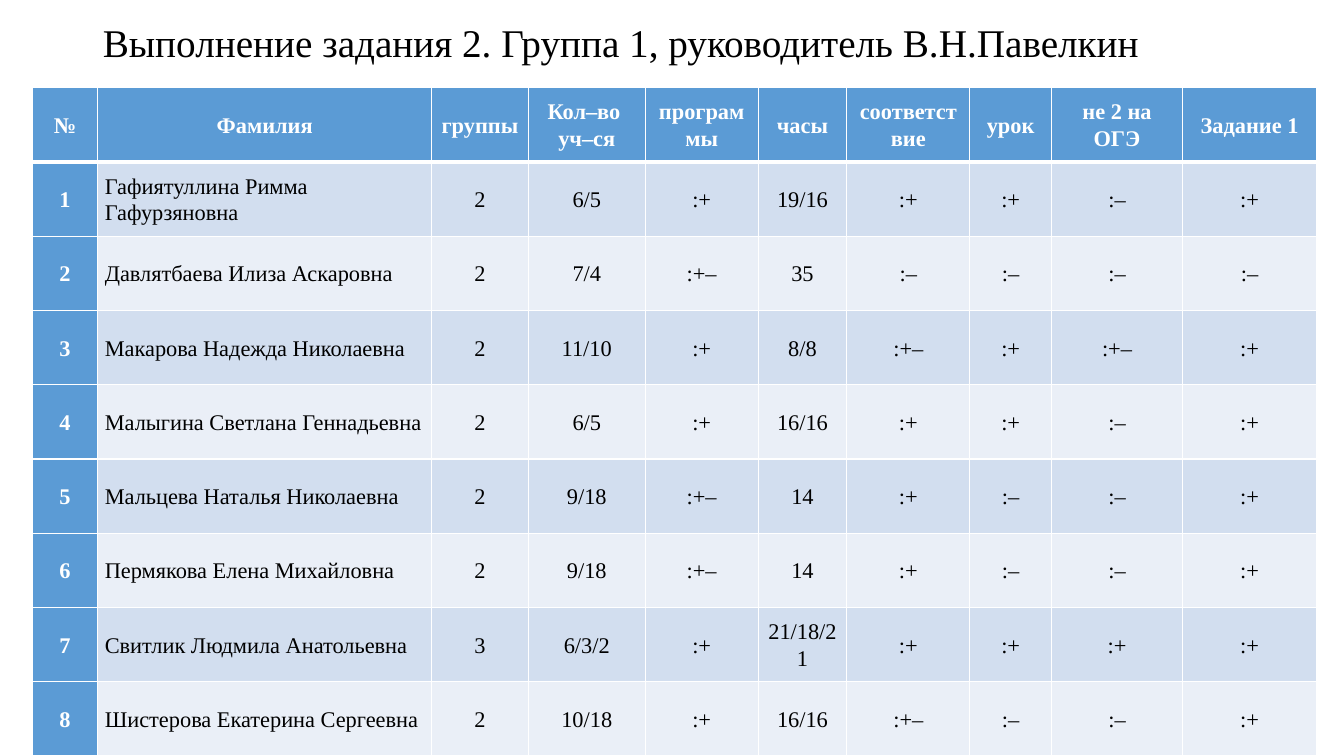
from lxml import etree
from pptx import Presentation
from pptx.dml.color import RGBColor
from pptx.enum.text import MSO_ANCHOR, PP_ALIGN
from pptx.oxml.ns import qn
from pptx.util import Inches, Pt

LEFT = PP_ALIGN.LEFT
CENTER = PP_ALIGN.CENTER
MIDDLE = MSO_ANCHOR.MIDDLE

WHITE = RGBColor(0xFF, 0xFF, 0xFF)
BLACK = RGBColor(0x00, 0x00, 0x00)
BLUE = RGBColor(0x5B, 0x9B, 0xD5)
BANDS = (RGBColor(0xD2, 0xDE, 0xEF), RGBColor(0xEA, 0xEF, 0xF7))

TITLE = "Выполнение задания 2. Группа 1, руководитель В.Н.Павелкин"
COLUMN_WIDTHS = (0.65, 3.31, 0.96, 1.16, 1.12, 0.88, 1.22, 0.81, 1.3, 1.33)
HEADINGS = ("№", "Фамилия", "группы", "Кол–во \nуч–ся", "программы", "часы",
            "соответствие", "урок", "не 2 на ОГЭ", "Задание 1")
TEACHERS = (
    ("Гафиятуллина Римма Гафурзяновна", "2", "6/5", ":+", "19/16", ":+", ":+", ":–", ":+"),
    ("Давлятбаева Илиза Аскаровна", "2", "7/4", ":+–", "35", ":–", ":–", ":–", ":–"),
    ("Макарова Надежда Николаевна", "2", "11/10", ":+", "8/8", ":+–", ":+", ":+–", ":+"),
    ("Малыгина Светлана Геннадьевна", "2", "6/5", ":+", "16/16", ":+", ":+", ":–", ":+"),
    ("Мальцева Наталья Николаевна", "2", "9/18", ":+–", "14", ":+", ":–", ":–", ":+"),
    ("Пермякова Елена Михайловна", "2", "9/18", ":+–", "14", ":+", ":–", ":–", ":+"),
    ("Свитлик Людмила Анатольевна", "3", "6/3/2", ":+", "21/18/21", ":+", ":+", ":+", ":+"),
    ("Шистерова Екатерина Сергеевна", "2", "10/18", ":+", "16/16", ":+–", ":–", ":–", ":+"),
)


class SlideBuilder:
    """Builds styled elements on one slide."""

    font_name = "Times New Roman"
    cell_format = {"vertical_anchor": MIDDLE, "margin_left": Inches(0.07),
                   "margin_right": Inches(0.07), "margin_top": 0, "margin_bottom": 0}

    def __init__(self, slide):
        self.slide = slide

    def apply(self, target, values):
        for name, value in values.items():
            setattr(target, name, value)

    def fill_text(self, frame, text, size, color, bold, alignment, spacing):
        paragraph = frame.paragraphs[0]
        paragraph.text = text
        self.apply(paragraph, {"alignment": alignment, "line_spacing": spacing})
        for run in paragraph.runs:
            self.apply(run.font, {"name": self.font_name, "size": Pt(size), "bold": bold})
            run.font.color.rgb = color

    def title(self, text, left, top, width, height):
        shape = self.slide.shapes.title
        self.apply(shape, {"left": Inches(left), "top": Inches(top),
                           "width": Inches(width), "height": Inches(height)})
        self.apply(shape.text_frame, {"vertical_anchor": MIDDLE, "word_wrap": True})
        self.fill_text(shape.text_frame, text, 28, BLACK, False, LEFT, 0.9)

    def border(self, cell, side, points):
        properties = cell._tc.get_or_add_tcPr()
        line = etree.SubElement(properties, qn(f"a:ln{side}"), w=str(Pt(points)))
        fill = etree.SubElement(line, qn("a:solidFill"))
        etree.SubElement(fill, qn("a:srgbClr"), val=str(WHITE))

    def cell(self, cell, text, row, column):
        is_heading = row == 0 or column == 0
        self.apply(cell, self.cell_format)
        widths = {"L": 1, "R": 1, "T": 3 if row == 1 else 1, "B": 3 if row == 0 else 1}
        for side, points in widths.items():
            self.border(cell, side, points)
        cell.fill.solid()
        cell.fill.fore_color.rgb = BLUE if is_heading else BANDS[(row - 1) % 2]
        alignment = LEFT if row and column == 1 else CENTER
        color = WHITE if is_heading else BLACK
        self.fill_text(cell.text_frame, text, 16, color, is_heading, alignment, 1.07)

    def table(self, rows, column_widths, left, top, width, height):
        table = self.slide.shapes.add_table(
            len(rows), len(column_widths), Inches(left), Inches(top),
            Inches(width), Inches(height)).table
        for column, column_width in zip(table.columns, column_widths):
            column.width = Inches(column_width)
        for row, texts in enumerate(rows):
            for column, text in enumerate(texts):
                self.cell(table.cell(row, column), text, row, column)


def main():
    presentation = Presentation()
    presentation.slide_width = Inches(13.33)
    presentation.slide_height = Inches(7.5)
    builder = SlideBuilder(presentation.slides.add_slide(presentation.slide_layouts[5]))
    builder.title(TITLE, 0.92, 0.16, 11.5, 0.56)
    rows = [HEADINGS]
    rows += [(str(number), *teacher) for number, teacher in enumerate(TEACHERS, 1)]
    builder.table(rows, COLUMN_WIDTHS, 0.32, 0.87, 12.75, 6.63)
    presentation.save("out.pptx")


if __name__ == "__main__":
    main()
